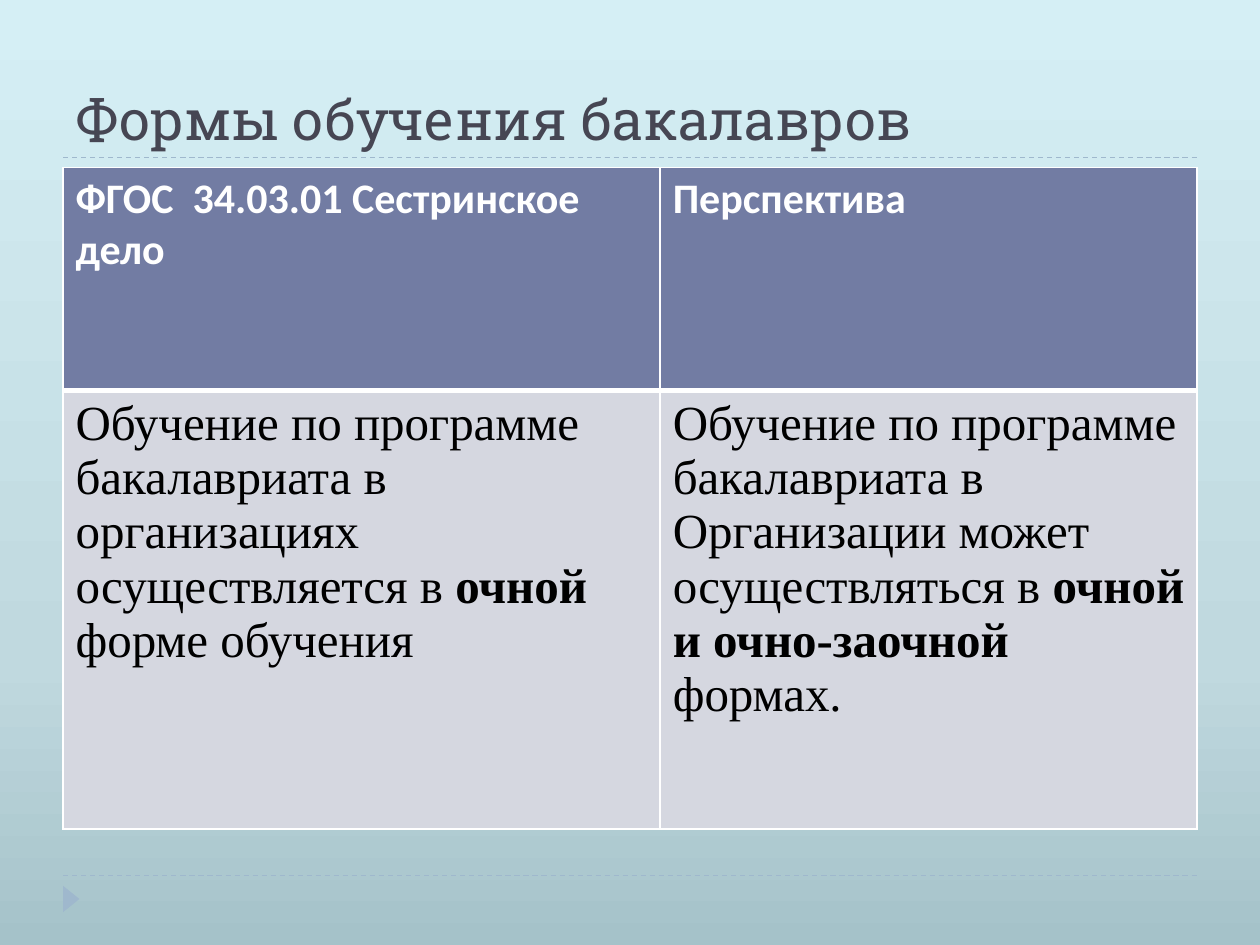
import copy

import pptx
import pptx.dml.color
import pptx.enum.dml
import pptx.enum.shapes
import pptx.enum.text
import pptx.oxml.ns
import pptx.oxml.xmlchemy
import pptx.util
from pptx.util import Inches

COLORS = {
    "sky_low": "A5C2C9", "sky_mid": "C0D9DF", "sky_top": "D5EFF5",
    "accent": "9FB8CD", "title": "464653", "header": "727CA3",
    "body": "D5D7E0", "white": "FFFFFF", "black": "000000",
}
HEADER = [
    [("ФГОС  34.03.01 Сестринское дело", True)],
    [("Перспектива", True)],
]
BODY = [
    [("Обучение по программе бакалавриата в организациях осуществляется в ", False),
     ("очной", True), (" форме обучения", False)],
    [("Обучение по программе бакалавриата в Организации может осуществляться в ", False),
     ("очной и очно-заочной ", True), ("формах.", False)],
]


def rgb(name):
    """Return the named colour."""
    return pptx.dml.color.RGBColor.from_string(COLORS[name])


def write(para, spans, font, size, color):
    """Add (text, bold) spans to a paragraph in one style."""
    for text, bold in spans:
        span = para.add_run()
        span.text = text
        span.font.name = font
        span.font.size = pptx.util.Pt(size)
        span.font.bold = bold
        span.font.color.rgb = rgb(color)


def paint_background(page):
    """Fill the page with a three-stop gradient rising from the bottom."""
    fill = page.background.fill
    fill.gradient()
    fill.gradient_angle = 90
    first = page.background._cSld.find(".//" + pptx.oxml.ns.qn("a:gs"))
    first.addnext(copy.deepcopy(first))
    stops = [(0, "sky_low"), (0.3, "sky_mid"), (1, "sky_top")]
    for stop, (position, color) in zip(fill.gradient_stops, stops):
        stop.position = position
        stop.color.rgb = rgb(color)


def add_rule(page, left, top, width):
    """Draw a dashed horizontal rule."""
    rule = page.shapes.add_connector(
        pptx.enum.shapes.MSO_CONNECTOR.STRAIGHT,
        Inches(left), Inches(top), Inches(left + width), Inches(top))
    rule.line.color.rgb = rgb("accent")
    rule.line.width = pptx.util.Pt(0.75)
    rule.line.dash_style = pptx.enum.dml.MSO_LINE.DASH
    rule._element.spPr.append(pptx.oxml.xmlchemy.OxmlElement("a:effectLst"))


def add_marker(page, left, top, width, height):
    """Draw the footer triangle pointing right."""
    marker = page.shapes.add_shape(
        pptx.enum.shapes.MSO_SHAPE.ISOSCELES_TRIANGLE,
        Inches(left), Inches(top), Inches(width), Inches(height))
    marker.rotation = 90
    marker.shadow.inherit = False
    marker.fill.solid()
    marker.fill.fore_color.rgb = rgb("accent")
    marker.line.fill.background()


def add_title(page, left, top, width, height):
    """Place the title at the bottom of its box."""
    box = page.shapes.add_textbox(
        Inches(left), Inches(top), Inches(width), Inches(height))
    frame = box.text_frame
    frame.word_wrap = True
    frame.vertical_anchor = pptx.enum.text.MSO_ANCHOR.BOTTOM
    write(frame.paragraphs[0], [("Формы обучения бакалавров", False)],
          "Roboto Slab", 32, "title")


def set_borders(cell, widths):
    """Give the cell white borders of the given widths by side."""
    props = cell._tc.get_or_add_tcPr()
    for index, side in enumerate("LRTB"):
        line = pptx.oxml.xmlchemy.OxmlElement("a:ln" + side)
        line.set("w", str(int(pptx.util.Pt(widths.get(side, 1)))))
        solid = pptx.oxml.xmlchemy.OxmlElement("a:solidFill")
        color = pptx.oxml.xmlchemy.OxmlElement("a:srgbClr")
        color.set("val", COLORS["white"])
        solid.append(color)
        line.append(solid)
        props.insert(index, line)


def add_comparison(page, left, top, width, height):
    """Build the table comparing the current standard with the prospect."""
    table = page.shapes.add_table(
        2, 2, Inches(left), Inches(top), Inches(width), Inches(height)).table
    first_width, header_height = 4.74, 1.77
    for column, size in zip(table.columns, (first_width, width - first_width)):
        column.width = Inches(size)
    for row, size in zip(table.rows, (header_height, height - header_height)):
        row.height = Inches(size)
    styles = [
        (HEADER, "header", "Calibri", 24, "white", {"B": 3}),
        (BODY, "body", "Times New Roman", 28, "black", {"T": 3}),
    ]
    for row, (texts, fill, font, size, color, widths) in zip(table.rows, styles):
        for cell, spans in zip(row.cells, texts):
            cell.fill.solid()
            cell.fill.fore_color.rgb = rgb(fill)
            set_borders(cell, widths)
            write(cell.text_frame.paragraphs[0], spans, font, size, color)


def main():
    """Build and save the deck."""
    deck = pptx.Presentation()
    deck.slide_width, deck.slide_height = Inches(10), Inches(7.5)
    page = deck.slides.add_slide(deck.slide_layouts[6])
    left, width = 0.5, 9
    paint_background(page)
    for top in (6.95, 1.25):
        add_rule(page, left, top, width)
    add_marker(page, 0.46, 7.07, 0.21, 0.13)
    add_title(page, left, 0.17, width, 1.08)
    add_comparison(page, left, 1.33, width, 5.25)
    deck.save("out.pptx")


if __name__ == "__main__":
    main()
